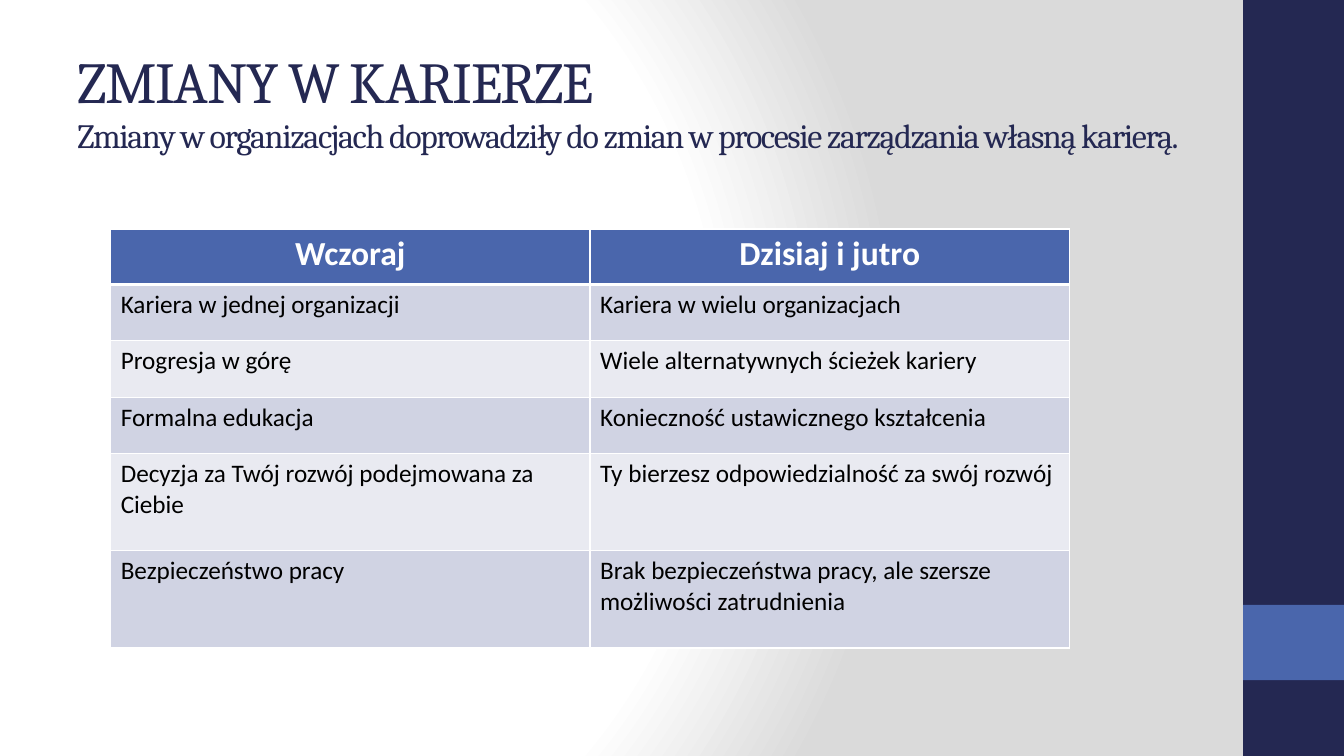
from lxml import etree
from pptx import Presentation
from pptx.dml.color import RGBColor
from pptx.enum.shapes import MSO_SHAPE
from pptx.enum.text import MSO_ANCHOR, PP_ALIGN
from pptx.oxml import parse_xml
from pptx.oxml.ns import nsdecls, qn
from pptx.util import Cm, Pt

NAVY, BLUE, WHITE, BLACK = "242852", "4A66AC", "FFFFFF", "000000"
BANDS = ("D0D3E3", "E9EAF1")
GRADIENT = ((0, WHITE), (75, WHITE), (100, "DADADA"))
SLIDE_WIDTH, SLIDE_HEIGHT = 33.87, 19.05
STRIPE_WIDTH = 2.54

# top, height, colour
STRIPES = [(0, SLIDE_HEIGHT, NAVY), (15.24, 1.9, BLUE)]

TITLE = [
    ("ZMIANY W KARIERZE", 41.4),
    ("Zmiany w organizacjach doprowadziły do zmian w procesie zarządzania własną karierą.", 24.3),
]
TITLE_BOX = (1.7, 0.76, 28.22, 3.68)
TITLE_MARGINS = {"margin_top": Cm(0.38), "margin_right": Cm(0)}

# row height, yesterday, today and tomorrow
ROWS = [
    (1.4, "Wczoraj", "Dzisiaj i jutro"),
    (1.42, "Kariera w jednej organizacji", "Kariera w wielu organizacjach"),
    (1.42, "Progresja w górę", "Wiele alternatywnych ścieżek kariery"),
    (1.42, "Formalna edukacja", "Konieczność ustawicznego kształcenia"),
    (2.45, "Decyzja za Twój rozwój podejmowana za Ciebie",
     "Ty bierzesz odpowiedzialność za swój rozwój"),
    (2.45, "Bezpieczeństwo pracy",
     "Brak bezpieczeństwa pracy, ale szersze możliwości zatrudnienia"),
]
TABLE_LEFT, TABLE_TOP, COLUMN_WIDTH = 2.79, 5.77, 12.08
HEADER_FONT = {"name": "Calibri", "size": Pt(24), "bold": True}
BODY_FONT = {"name": "Calibri", "size": Pt(18), "bold": False}


def paint(target, colour):
    """Give a fill a solid colour."""
    target.solid()
    target.fore_color.rgb = RGBColor.from_string(colour)


def write(para, text, font, colour):
    span = para.add_run()
    span.text = text
    for name, value in font.items():
        setattr(span.font, name, value)
    paint(span.font.fill, colour)
    return span


def add_background(page):
    stops = "".join(
        f'<a:gs pos="{pos * 1000}"><a:srgbClr val="{colour}"/></a:gs>' for pos, colour in GRADIENT)
    page.element.cSld.insert(0, parse_xml(
        f'<p:bg {nsdecls("p", "a")}><p:bgPr><a:gradFill rotWithShape="1"><a:gsLst>{stops}</a:gsLst>'
        '<a:path path="circle"><a:fillToRect l="20000" t="50000" r="100000" b="50000"/></a:path>'
        '</a:gradFill><a:effectLst/></p:bgPr></p:bg>'))


def add_stripes(page):
    for top, height, colour in STRIPES:
        stripe = page.shapes.add_shape(
            MSO_SHAPE.RECTANGLE, Cm(SLIDE_WIDTH - STRIPE_WIDTH), Cm(top),
            Cm(STRIPE_WIDTH), Cm(height))
        stripe.shadow.inherit = False
        stripe.line.fill.background()
        paint(stripe.fill, colour)


def add_title(page):
    frame = page.shapes.add_textbox(*map(Cm, TITLE_BOX)).text_frame
    frame.word_wrap = True
    frame.vertical_anchor = MSO_ANCHOR.TOP
    for name, value in TITLE_MARGINS.items():
        setattr(frame, name, value)
    for index, (text, size) in enumerate(TITLE):
        para = frame.add_paragraph() if index else frame.paragraphs[0]
        span = write(para, text, {"name": "Cambria", "size": Pt(size)}, NAVY)
        span.font._element.set("spc", "-100")


def add_borders(cell, widths):
    """Draw white borders; widths are points in the order left, right, top, bottom."""
    properties = cell._tc.get_or_add_tcPr()
    for index, (side, width) in enumerate(zip("LRTB", widths)):
        border = etree.Element(qn(f"a:ln{side}"), w=str(Pt(width)))
        solid = etree.SubElement(border, qn("a:solidFill"))
        etree.SubElement(solid, qn("a:srgbClr"), val=WHITE)
        properties.insert(index, border)


def add_career_table(page):
    height = sum(row[0] for row in ROWS)
    table = page.shapes.add_table(
        len(ROWS), 2, Cm(TABLE_LEFT), Cm(TABLE_TOP), Cm(2 * COLUMN_WIDTH), Cm(height)).table
    for column in table.columns:
        column.width = Cm(COLUMN_WIDTH)
    for row_index, (row_height, *texts) in enumerate(ROWS):
        table.rows[row_index].height = Cm(row_height)
        header = row_index == 0
        for column_index, text in enumerate(texts):
            cell = table.cell(row_index, column_index)
            para = cell.text_frame.paragraphs[0]
            para.alignment = PP_ALIGN.CENTER if header else PP_ALIGN.LEFT
            write(para, text, HEADER_FONT if header else BODY_FONT, WHITE if header else BLACK)
            paint(cell.fill, BLUE if header else BANDS[(row_index - 1) % 2])
            add_borders(cell, (1, 1, 3 if row_index == 1 else 1, 3 if header else 1))


def main():
    deck = Presentation()
    deck.slide_width, deck.slide_height = Cm(SLIDE_WIDTH), Cm(SLIDE_HEIGHT)
    page = deck.slides.add_slide(deck.slide_layouts[6])
    add_background(page)
    add_stripes(page)
    add_title(page)
    add_career_table(page)
    deck.save("out.pptx")


if __name__ == "__main__":
    main()
